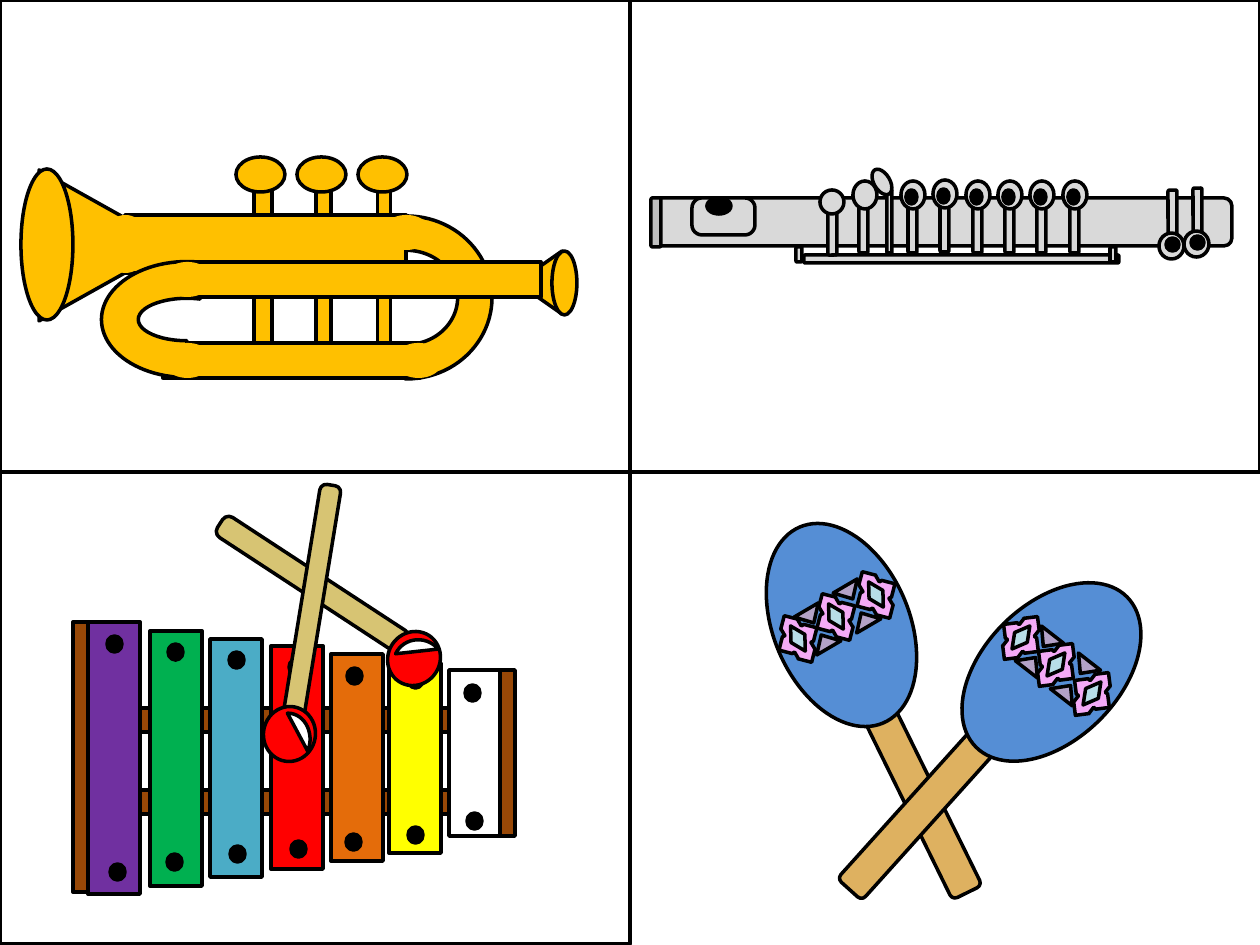
from pptx import Presentation
from pptx.dml.color import RGBColor
from pptx.enum.shapes import MSO_SHAPE as S
from pptx.util import Pt

EMU_PER_PIXEL = 914400 // 126
COLORS = {
    "black": "000000", "white": "FFFFFF", "brass": "FFC000",
    "silver": "D9D9D9", "steel": "BFBFBF", "brown": "984807",
    "yellow": "FFFF00", "orange": "E46C0A", "red": "FF0000",
    "teal": "4BACC6", "green": "00B050", "purple": "7030A0",
    "stick": "D7C473", "wood": "DEB160", "blue": "558ED5",
    "pink": "F4AAF6", "ice": "B7DEE8", "lilac": "B3A2C7",
}


class Card:
    def __init__(self, deck):
        self.slide = deck.slides.add_slide(deck.slide_layouts[6])
        self.target = self.slide.shapes

    def begin_group(self):
        self.target = self.slide.shapes.add_group_shape().shapes

    def end_group(self):
        self.target = self.slide.shapes

    def shape(self, kind, box, color=None, spin=0, adjust=(), outlined=True):
        item = self.target.add_shape(kind, *(v * EMU_PER_PIXEL for v in box))
        item.shadow.inherit = False
        item.rotation = spin
        for index, value in enumerate(adjust):
            item.adjustments[index] = value
        if color:
            item.fill.solid()
            item.fill.fore_color.rgb = RGBColor.from_string(COLORS[color])
        else:
            item.fill.background()
        if outlined:
            item.line.color.rgb = RGBColor.from_string(COLORS["black"])
            item.line.width = Pt(2)
        else:
            item.line.fill.background()

    def rect(self, box, color=None, spin=0):
        self.shape(S.RECTANGLE, box, color, spin)

    def bar(self, box, color, spin=0, adjust=()):
        self.shape(S.ROUNDED_RECTANGLE, box, color, spin, adjust)

    def oval(self, box, color, spin=0, outlined=True):
        self.shape(S.OVAL, box, color, spin, outlined=outlined)

    def flute_key(self, stem, cap, hole=None, spin=0):
        self.bar(stem, "silver", spin)
        self.oval(cap, "silver", spin)
        if hole:
            self.oval(hole, "black", spin)

    def mallet(self, stick, head, shine, spin):
        self.bar(stick, "stick", spin, [0.306])
        self.oval(head, "red", spin)
        self.shape(S.CHORD, shine, "white", spin - 90, [49.519, 118.378])

    def maraca(self, handle, handle_spin, head, head_spin, stars, upper, lower, band_spin):
        self.bar((*handle, 33, 221), "wood", handle_spin)
        self.oval((*head, 213, 136), "blue", head_spin)
        for x, y in stars:
            self.shape(S.QUAD_ARROW, (x, y, 44, 54), "pink", band_spin, [0.432, 0.225, 0.225])
            self.shape(S.DIAMOND, (x + 14, y + 12, 16, 29), "ice", band_spin)
        for corners, spin in ((upper, (band_spin + 180) % 360), (lower, band_spin)):
            for x, y in corners:
                self.shape(S.ISOSCELES_TRIANGLE, (x, y, 28, 15), "lilac", spin)


def draw_trumpet(card):
    card.begin_group()
    for valve in ((297, 257, 174, 13), (242, 255, 163, 15), (181, 252, 164, 18)):
        card.rect(valve, "brass", 90)
    card.shape(S.ISOSCELES_TRIANGLE, (508, 260, 63, 45), "brass", 270)
    card.shape(S.ISOSCELES_TRIANGLE, (31, 178, 151, 135), "brass", 90)
    card.rect((125, 215, 281, 58), "brass")
    card.oval((21, 169, 52, 151), "brass")
    card.shape(S.BLOCK_ARC, (325, 212, 163, 171), "brass", 90, [108, 0.486, 0.211])
    card.rect((163, 343, 257, 35), "brass")
    card.shape(S.BLOCK_ARC, (129, 234, 116, 171), "brass", 270, [108, 19.061, 0.317])
    card.rect((186, 262, 355, 35), "brass")
    card.oval((552, 251, 25, 64), "brass")
    for x in (236, 297, 358):
        card.oval((x, 157, 49, 35), "brass")
    for x, y, height in ((382, 215, 35), (163, 262, 35), (163, 343, 35),
                         (394, 343, 35), (101, 215, 58)):
        card.oval((x, y, 49, height), "brass", outlined=False)
    card.end_group()


def draw_flute(card):
    card.begin_group()
    card.bar((804, 255, 315, 8), "silver")
    card.bar((651, 198, 581, 48), "silver")
    card.flute_key((828, 212, 9, 43), (820, 190, 24, 24))
    card.flute_key((859, 205, 9, 48), (853, 181, 24, 28))
    for index in range(6):
        x = 908 + round(32.3 * index)
        lift = 1 if index == 1 else 0
        card.flute_key((x, 205 - lift, 9, 48), (x - 7, 181 - lift, 24, 28),
                       (x - 2, 190 - lift, 11, 14))
    for x, y in ((1168, 190), (1193, 188)):
        card.flute_key((x, y, 9, 47), (x - 9, y + 43, 25, 26),
                       (x - 2, y + 48, 13, 13), 180)
    card.bar((651, 198, 10, 49), "steel")
    card.bar((692, 198, 63, 37), "silver", adjust=[0.272])
    card.oval((707, 198, 24, 16), "black")
    for x in (1110, 796):
        card.bar((x, 247, 6, 15), "silver")
    card.bar((887, 190, 5, 63), "silver")
    card.oval((874, 168, 16, 28), "silver", 329.5)
    card.end_group()


def draw_xylophone(card):
    card.begin_group()
    for x, y in ((86, 708), (88, 790)):
        card.rect((x, y, 412, 24), "brown", 180)
    notes = (
        ("white", 449, 670, 166, (465, 685), (467, 813)),
        ("yellow", 389, 663, 190, (408, 672), (408, 827)),
        ("orange", 331, 654, 207, (347, 668), (346, 834)),
        ("red", 271, 646, 223, (289, 659), (291, 841)),
        ("teal", 210, 639, 238, (229, 652), (230, 846)),
        ("green", 150, 631, 255, (168, 644), (167, 854)),
        ("purple", 88, 622, 272, (107, 636), (110, 864)),
    )
    for color, x, y, height, *pegs in notes:
        card.rect((x, y, 52, height), color, 180)
        for peg in pegs:
            card.oval((*peg, 15, 16), "black", 180)
    card.rect((500, 670, 15, 166), "brown", 180)
    card.rect((73, 622, 15, 270), "brown", 180)
    card.mallet((202, 572, 221, 24), (388, 631, 52, 55), (394, 639, 50, 52), 213.2)
    card.mallet((193, 592, 238, 21), (262, 708, 55, 52), (263, 713, 47, 55), 279.3)
    card.end_group()


def draw_maracas(card):
    card.begin_group()
    card.maraca((902, 683), 333.8, (735, 557), 247,
                ((776, 612), (814, 590), (854, 568)),
                ((796, 609), (835, 585)), ((811, 634), (851, 612)), 329.6)
    card.maraca((907, 697), 42, (945, 604), 315.2,
                ((999, 611), (1034, 638), (1070, 667)),
                ((1034, 633), (1071, 660)), ((1017, 656), (1052, 684)), 37.8)
    card.end_group()


deck = Presentation()
deck.slide_width = 1260 * EMU_PER_PIXEL
deck.slide_height = 945 * EMU_PER_PIXEL
instruments = Card(deck)
draw_trumpet(instruments)
draw_flute(instruments)
for corner in ((0, 0), (630, 0), (0, 472)):
    instruments.rect((*corner, 630, 472))
draw_xylophone(instruments)
draw_maracas(instruments)
deck.save("out.pptx")
